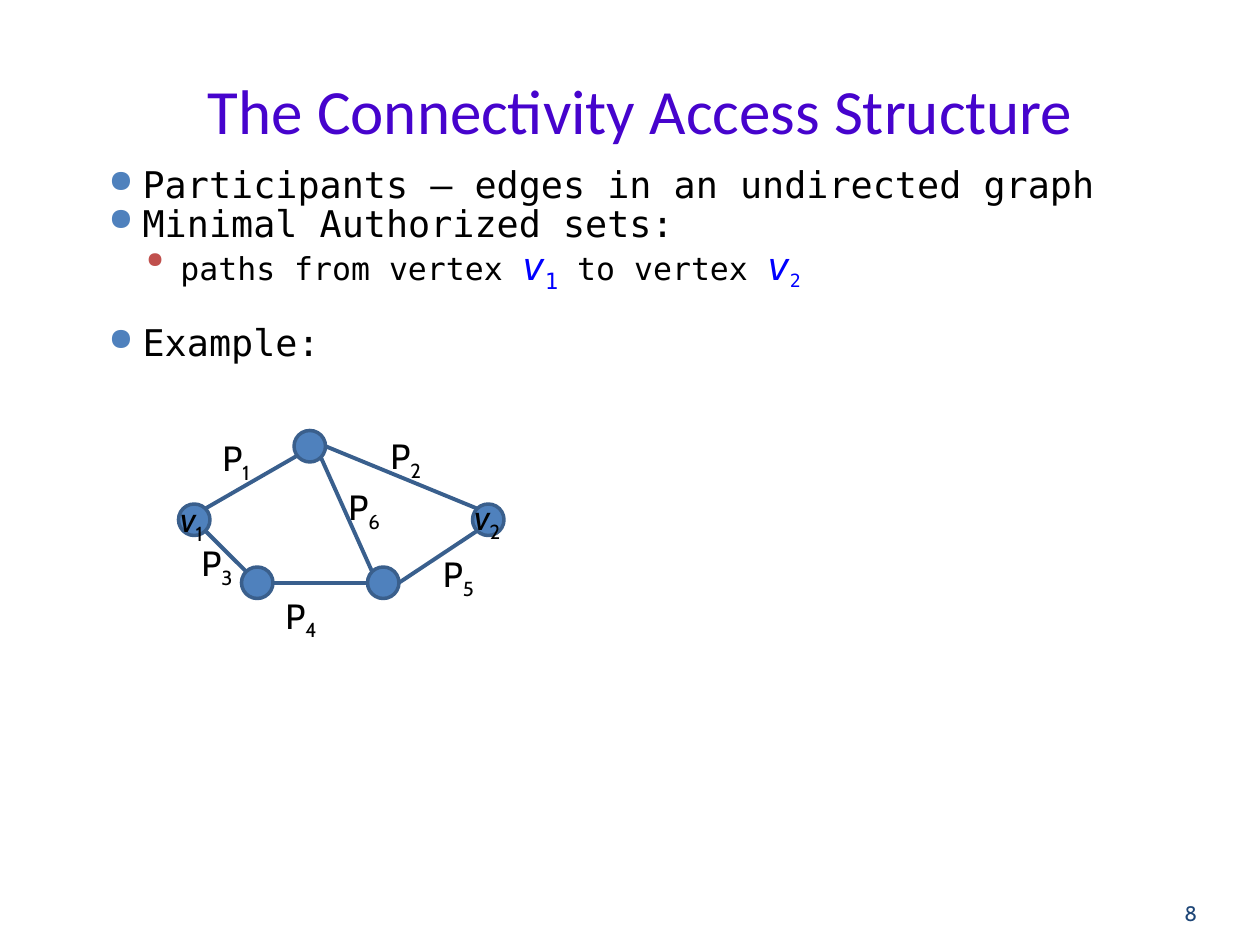
"""Build the slide about the connectivity access structure."""
from lxml import etree
from pptx import Presentation
from pptx.dml.color import RGBColor
from pptx.enum.shapes import MSO_CONNECTOR, MSO_SHAPE
from pptx.enum.text import MSO_ANCHOR, PP_ALIGN
from pptx.oxml.ns import qn
from pptx.util import Pt

STRAIGHT = MSO_CONNECTOR.STRAIGHT
OVAL = MSO_SHAPE.OVAL
TOP, BOTTOM = MSO_ANCHOR.TOP, MSO_ANCHOR.BOTTOM
LEFT, CENTER, RIGHT = PP_ALIGN.LEFT, PP_ALIGN.CENTER, PP_ALIGN.RIGHT

COLORS = {
    "title": "4603CD", "text": "000000", "vertex": "0000FF", "number": "1E4677",
    "bullet1": "4F81BD", "bullet2": "C0504D",
    "node": "4F81BD", "outline": "3A5F8C", "edge": "395F8D",
}
MONO, LABEL_FONT = "DejaVu Sans Mono", "Cabin"

# fmt: off
TITLE = "The Connectivity Access Structure"
BULLETS = [
    (1, 4.2, [("Participants – edges in an undirected graph", 21, "")]),
    (1, 4.2, [("Minimal Authorized sets:", 21, "")]),
    (2, 4.2, [("paths from vertex ", 18, ""), ("v", 22, "vertex italic"), ("1", 22, "vertex sub"),
              (" to vertex ", 18, ""), ("v", 22, "vertex italic"), ("2", 18, "vertex sub")]),
    (1, 25.5, [("Example:", 21, "")]),
]
LEVELS = {1: (50.4, 85, "bullet1"), 2: (72, 70, "bullet2")}
HANGING = 19.4

NODES = {"v1": (111, 297), "v2": (279, 297), "low left": (147, 333),
         "low right": (219, 333), "top": (177, 255)}
DIAMETER = 18
SITES = {"e": (9, 0), "w": (-9, 0), "ne": (6.4, -6.4), "nw": (-6.4, -6.4),
         "se": (6.4, 6.4), "sw": (-6.4, 6.4), "inner": (-3, 3)}
EDGES = [
    ("v1", "se", "low left", "nw"), ("v1", "ne", "top", "inner"),
    ("top", "se", "low right", "nw"), ("top", "e", "v2", "nw"),
    ("low left", "e", "low right", "w"), ("low right", "e", "v2", "sw"),
]
LABELS = [
    ("P", "1", 120, 246, 42), ("P", "4", 156, 336, 42), ("P", "3", 108, 306, 42),
    ("P", "6", 192, 274, 36), ("P", "2", 216, 245, 36), ("P", "5", 246, 312, 42),
    ("v", "1", 96, 281, 30), ("v", "2", 264, 279.5, 30),
]
# fmt: on


def color(name):
    return RGBColor.from_string(COLORS[name])


def add_box(page, place, anchor=TOP, insets=(7.2, 3.6, 7.2, 3.6)):
    frame = page.shapes.add_textbox(*map(Pt, place)).text_frame
    frame.word_wrap = True
    frame.vertical_anchor = anchor
    frame.margin_left, frame.margin_top, frame.margin_right, frame.margin_bottom = map(Pt, insets)
    return frame


def add_span(para, text, size, font, fill="text", italic=False, sub=False):
    span = para.add_run()
    span.text = text
    span.font.size, span.font.name = Pt(size), font
    span.font.color.rgb = color(fill)
    span.font.italic = italic
    if sub:
        span.font._element.set("baseline", "-25000")


def add_line_of_text(page, place, text, size, font, fill, align, anchor, insets):
    para = add_box(page, place, anchor, insets).paragraphs[0]
    para.alignment = align
    add_span(para, text, size, font, fill)


def set_bullet(para, level):
    indent, percent, fill = LEVELS[level]
    props = para._p.get_or_add_pPr()
    props.set("marL", str(Pt(indent)))
    props.set("indent", str(-Pt(HANGING)))
    holder = etree.SubElement(props, qn("a:buClr"))
    etree.SubElement(holder, qn("a:srgbClr"), val=COLORS[fill])
    etree.SubElement(props, qn("a:buSzPct"), val=str(percent * 1000))
    etree.SubElement(props, qn("a:buChar"), char="●")


def add_bullets(page):
    frame = add_box(page, (24, 96, 672, 120))
    for index, (level, gap, spans) in enumerate(BULLETS):
        para = frame.add_paragraph() if index else frame.paragraphs[0]
        para.alignment = LEFT
        para.level = level - 1
        para.line_spacing, para.space_before = 0.7, Pt(gap)
        set_bullet(para, level)
        for text, size, style in spans:
            fill = "vertex" if "vertex" in style else "text"
            add_span(para, text, size, MONO, fill, "italic" in style, "sub" in style)


def add_node(page, name):
    x, y = NODES[name]
    corner = (x - DIAMETER / 2, y - DIAMETER / 2)
    node = page.shapes.add_shape(OVAL, *map(Pt, (*corner, DIAMETER, DIAMETER)))
    node.shadow.inherit = False
    node.fill.solid()
    node.fill.fore_color.rgb = color("node")
    node.line.color.rgb = color("outline")
    node.line.width = Pt(2)


def site_point(name, site):
    return [Pt(a + b) for a, b in zip(NODES[name], SITES[site])]


def add_edge(page, start, start_site, end, end_site):
    ends = site_point(start, start_site) + site_point(end, end_site)
    edge = page.shapes.add_connector(STRAIGHT, *ends)
    edge.line.color.rgb = color("edge")
    edge.line.width = Pt(2.25)
    etree.SubElement(edge._element.spPr, qn("a:effectLst"))


def add_graph(page):
    for name in list(NODES)[:-1]:
        add_node(page, name)
    for edge in EDGES:
        add_edge(page, *edge)
    for letter, number, x, y, width in LABELS:
        para = add_box(page, (x, y, width, 31.5)).paragraphs[0]
        add_span(para, letter, 20, LABEL_FONT, italic=letter == "v")
        add_span(para, number, 20, LABEL_FONT, sub=True)
    add_node(page, "top")


def main():
    deck = Presentation()
    deck.slide_width, deck.slide_height = Pt(720), Pt(540)
    page = deck.slides.add_slide(deck.slide_layouts[6])
    add_line_of_text(page, (42, 42, 648, 42), TITLE, 36, "Calibri", "title",
                     CENTER, BOTTOM, (0, 3.6, 0, 0))
    add_bullets(page)
    add_line_of_text(page, (624, 500.5, 60, 28.5), "8", 12, LABEL_FONT, "number",
                     RIGHT, BOTTOM, (0, 0, 0, 0))
    add_graph(page)
    deck.save("out.pptx")


if __name__ == "__main__":
    main()
